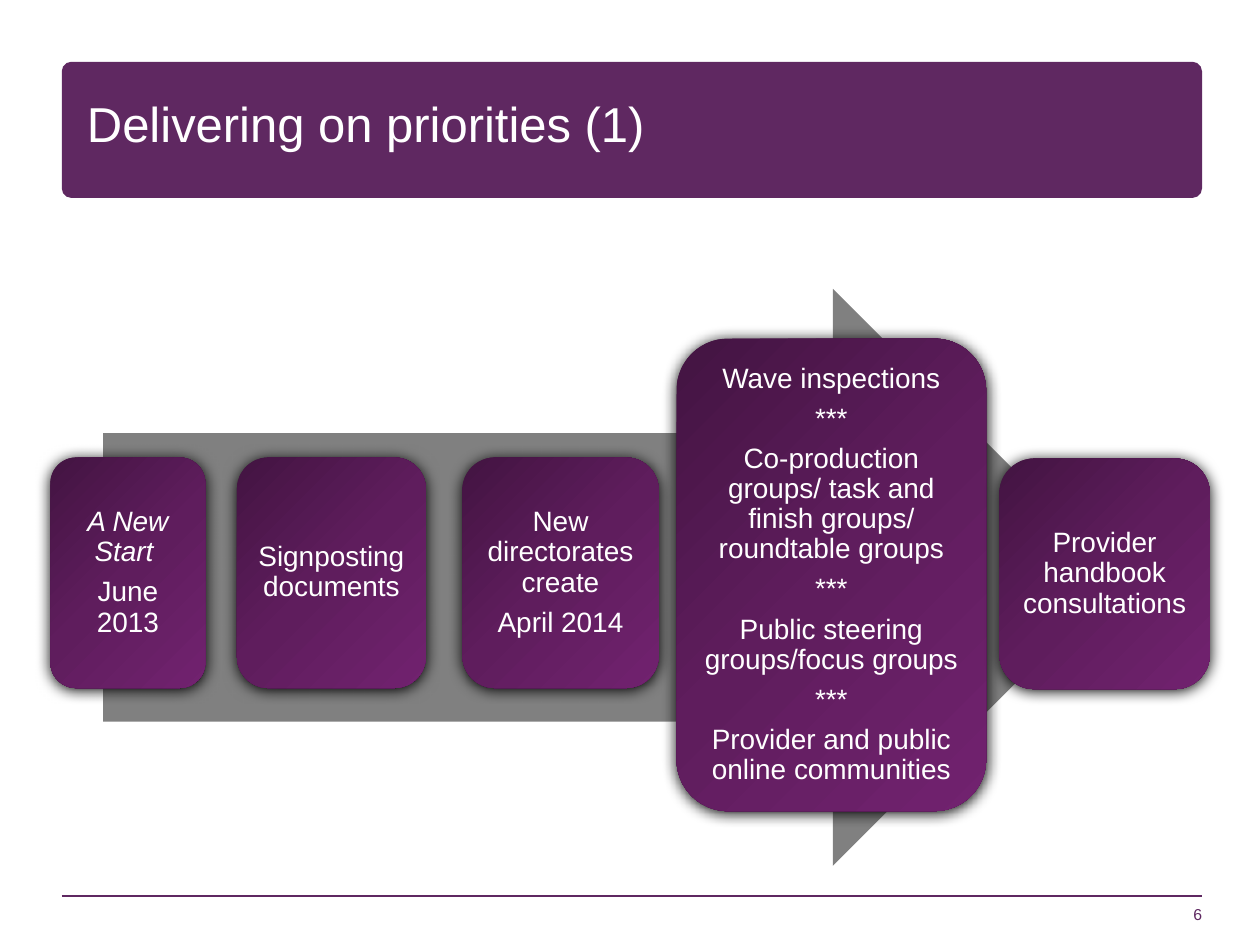
from dataclasses import dataclass

from lxml.etree import SubElement
from pptx import Presentation
from pptx.dml.color import RGBColor
from pptx.enum.shapes import MSO_CONNECTOR, MSO_SHAPE
from pptx.enum.text import MSO_ANCHOR, MSO_AUTO_SIZE, PP_ALIGN
from pptx.oxml import parse_xml
from pptx.oxml.ns import nsdecls, qn
from pptx.util import Pt


@dataclass(frozen=True)
class Theme:
    font: str = "Arial"
    purple: str = "5F2861"
    grey: str = "808080"
    white: str = "FFFFFF"
    shadow: str = "000000"
    gradient: tuple = ((0, "431442"), (50, "5F1D5D"), (100, "71226F"))
    title_size: float = 28
    stage_size: float = 16
    number_size: float = 9


THEME = Theme()
MARGIN_LEFT, MARGIN_RIGHT = 35.3, 686.9

# Left, top, width, height; paragraphs; whether the first paragraph is italic
STAGES = [
    ((28.8, 261.4, 88.6, 131.8), ["A New Start ", "June 2013"], True),
    ((135.4, 261.4, 108, 131.8), ["Signposting documents"], False),
    ((264.2, 261.4, 112.3, 131.8), ["New directorates create", "April 2014"], False),
    ((386.6, 193.5, 176.9, 270),
     ["Wave inspections", "***",
      "Co-production groups/ task and finish groups/ roundtable groups", "***",
      "Public steering groups/focus groups", "***",
      "Provider and public online communities"], False),
    ((571, 262, 120.4, 131.8), ["Provider handbook consultations"], False),
]


def points(*values):
    return [Pt(value) for value in values]


def style_font(para, size, color):
    para.font.name = THEME.font
    para.font.size = Pt(size)
    para.font.color.rgb = RGBColor.from_string(color)


def set_frame(frame, anchor, horizontal=0, vertical=0):
    frame.word_wrap = True
    frame.auto_size = MSO_AUTO_SIZE.NONE
    frame.vertical_anchor = anchor
    frame.margin_left = frame.margin_right = Pt(horizontal)
    frame.margin_top = frame.margin_bottom = Pt(vertical)


def add_plain_shape(page, kind, bounds, color):
    shape = page.shapes.add_shape(kind, *points(*bounds))
    shape.shadow.inherit = False
    shape.fill.solid()
    shape.fill.fore_color.rgb = RGBColor.from_string(color)
    shape.line.fill.background()
    return shape


def apply_gradient_and_shadow(shape):
    properties = shape.element.spPr
    stops = "".join(
        f'<a:gs pos="{position * 1000}"><a:srgbClr val="{color}"/></a:gs>'
        for position, color in THEME.gradient)
    gradient = parse_xml(
        f'<a:gradFill {nsdecls("a")} rotWithShape="1"><a:gsLst>{stops}</a:gsLst>'
        '<a:lin ang="2700000" scaled="0"/></a:gradFill>')
    properties.replace(properties.find(qn("a:solidFill")), gradient)
    properties.find(qn("a:effectLst")).append(parse_xml(
        f'<a:outerShdw {nsdecls("a")} blurRad="{Pt(8.5)}" dist="{Pt(1)}" '
        f'dir="5400000" rotWithShape="0"><a:srgbClr val="{THEME.shadow}"/></a:outerShdw>'))


def add_title(page, text):
    title = page.shapes.title
    title.left, title.top, title.width, title.height = points(42.5, 54.7, 459.4, 45.4)
    set_frame(title.text_frame, MSO_ANCHOR.TOP, 7.2, 3.6)
    title.text_frame.text = text
    para = title.text_frame.paragraphs[0]
    para.alignment = PP_ALIGN.LEFT
    para.line_spacing = 0.85
    style_font(para, THEME.title_size, THEME.white)
    # Band behind the title
    band = add_plain_shape(page, MSO_SHAPE.ROUNDED_RECTANGLE,
                           (MARGIN_LEFT, 35.3, MARGIN_RIGHT - MARGIN_LEFT, 77.8),
                           THEME.purple)
    band.adjustments[0] = 0.07
    title.element.addprevious(band.element)


def add_footer(page, number):
    rule = page.shapes.add_connector(
        MSO_CONNECTOR.STRAIGHT, *points(MARGIN_LEFT, 512, MARGIN_RIGHT, 512))
    rule.line.color.rgb = RGBColor.from_string(THEME.purple)
    rule.line.width = Pt(1)
    SubElement(rule.element.spPr, qn("a:effectLst"))
    box = page.shapes.add_textbox(*points(MARGIN_RIGHT - 150, 491.8, 150, 36))
    set_frame(box.text_frame, MSO_ANCHOR.BOTTOM)
    box.text_frame.text = number
    para = box.text_frame.paragraphs[0]
    para.alignment = PP_ALIGN.RIGHT
    style_font(para, THEME.number_size, THEME.purple)


def add_stage(page, bounds, texts, first_italic):
    box = add_plain_shape(page, MSO_SHAPE.ROUNDED_RECTANGLE, bounds, THEME.purple)
    apply_gradient_and_shadow(box)
    set_frame(box.text_frame, MSO_ANCHOR.MIDDLE, 4.8, 4.8)
    box.text_frame.text = "\n".join(texts)
    for para in box.text_frame.paragraphs:
        para.alignment = PP_ALIGN.CENTER
        para.line_spacing = 0.9
        para.space_after = Pt(5.6)
        style_font(para, THEME.stage_size, THEME.white)
    if first_italic:
        box.text_frame.paragraphs[0].font.italic = True


def main():
    deck = Presentation()
    deck.slide_width, deck.slide_height = points(720, 540)
    page = deck.slides.add_slide(deck.slide_layouts[5])

    # Title and footer
    add_title(page, "Delivering on priorities (1)")
    add_footer(page, "6")

    # Timeline arrow with its stages
    add_plain_shape(page, MSO_SHAPE.RIGHT_ARROW, (59, 165, 581.8, 329.8), THEME.grey)
    for bounds, texts, first_italic in STAGES:
        add_stage(page, bounds, texts, first_italic)

    deck.save("out.pptx")


if __name__ == "__main__":
    main()
